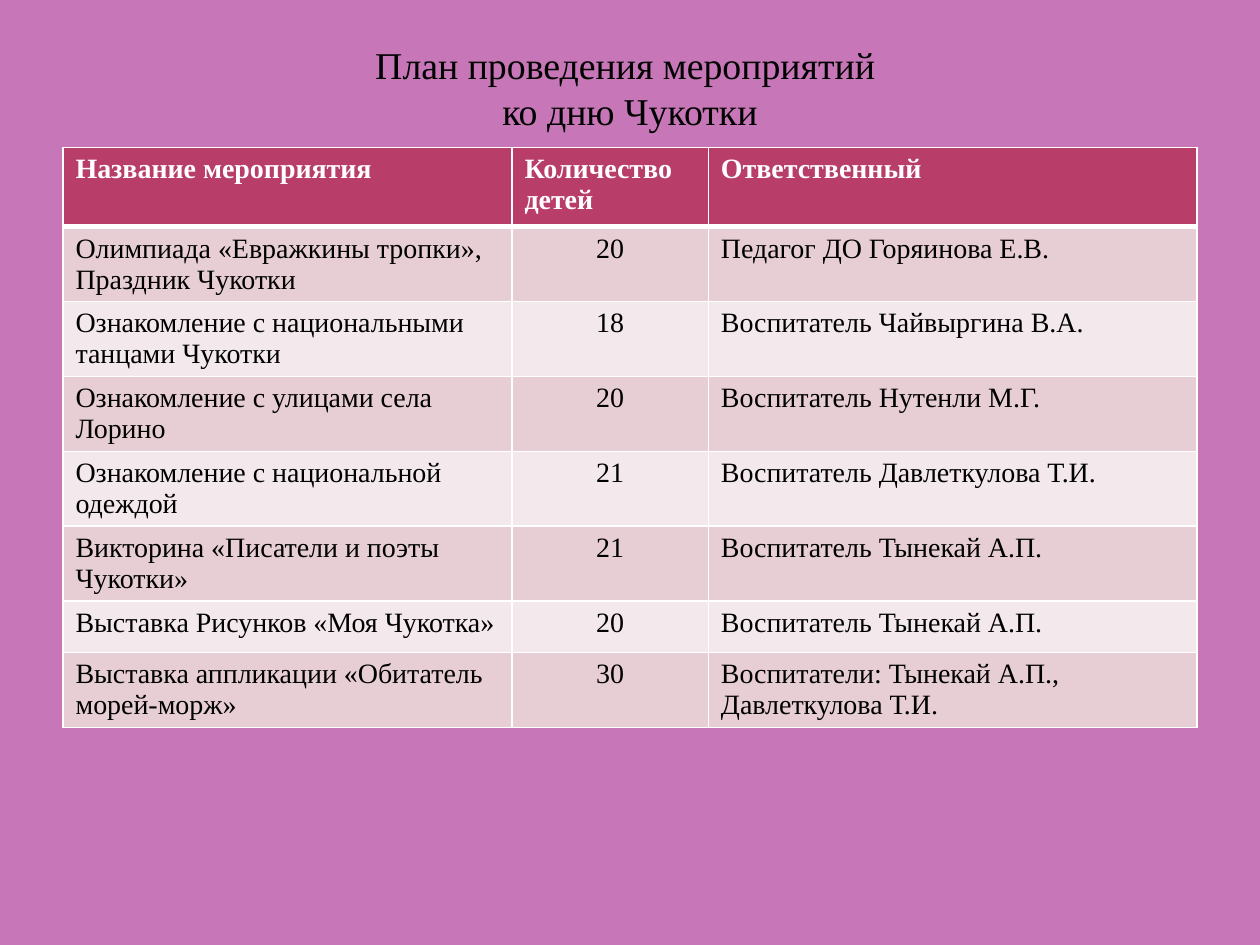
from lxml import etree
from pptx import Presentation, util as u
from pptx.dml.color import RGBColor
from pptx.enum import text
from pptx.oxml.ns import qn

TITLE = "План проведения мероприятий \vко дню Чукотки"
HEADER = ("Название мероприятия", "Количество детей", "Ответственный")
EVENTS = [
    ("Олимпиада «Евражкины тропки», Праздник Чукотки", "20", "Педагог ДО Горяинова Е.В."),
    ("Ознакомление с национальными танцами Чукотки", "18", "Воспитатель Чайвыргина В.А."),
    ("Ознакомление с улицами села Лорино", "20", "Воспитатель Нутенли М.Г."),
    ("Ознакомление с национальной одеждой", "21", "Воспитатель Давлеткулова Т.И."),
    ("Викторина «Писатели и поэты Чукотки»", "21", "Воспитатель Тынекай А.П."),
    ("Выставка Рисунков «Моя Чукотка»", "20", "Воспитатель Тынекай А.П."),
    ("Выставка аппликации «Обитатель морей-морж»", "30",
     "Воспитатели: Тынекай А.П., Давлеткулова Т.И."),
]
COLUMN_WIDTHS = (9.05, 3.96, 9.85)
ROW_HEIGHTS = (1.6, 1.5, 1.5, 1.5, 1.5, 1.5, 1.04, 1.5)
FONT = "Times New Roman"
COLORS = {"background": "C777B7", "header": "B83D68", "odd": "E6CED4",
          "even": "F3E8EB", "border": "FFFFFF", "header_text": "FFFFFF",
          "text": "000000"}


def rgb(name):
    return RGBColor.from_string(COLORS[name])


def style_runs(p, size, color, bold=False):
    for r in p.runs:
        r.font.name = FONT
        r.font.size = u.Pt(size)
        r.font.bold = bold
        r.font.color.rgb = rgb(color)


def set_borders(cell, **widths):
    """Draw cell borders; widths maps L, R, T and B to points."""
    props = cell._tc.get_or_add_tcPr()
    for i, (side, width) in enumerate(widths.items()):
        line = etree.Element(qn(f"a:ln{side}"), w=str(u.Pt(width)))
        fill = etree.SubElement(line, qn("a:solidFill"))
        etree.SubElement(fill, qn("a:srgbClr"), val=COLORS["border"])
        props.insert(i, line)


def add_title(s):
    sp = s.shapes.title
    sp.left, sp.top, sp.width, sp.height = (u.Cm(v) for v in (1.27, 0.76, 22.86, 2))
    tf = sp.text_frame
    tf.word_wrap = True
    tf.auto_size = text.MSO_AUTO_SIZE.NONE
    tf.vertical_anchor = text.MSO_ANCHOR.MIDDLE
    p = tf.paragraphs[0]
    p.text = TITLE
    p.alignment = text.PP_ALIGN.CENTER
    style_runs(p, 21.6, "text")


def add_plan(s):
    rows = [HEADER, *EVENTS]
    table = s.shapes.add_table(
        len(rows), len(HEADER), u.Cm(1.27), u.Cm(2.97),
        u.Cm(sum(COLUMN_WIDTHS)), u.Cm(sum(ROW_HEIGHTS))).table
    for column, width in zip(table.columns, COLUMN_WIDTHS):
        column.width = u.Cm(width)
    for i, (row, values, height) in enumerate(zip(table.rows, rows, ROW_HEIGHTS)):
        row.height = u.Cm(height)
        is_header = i == 0
        fill = "header" if is_header else ("even", "odd")[i % 2]
        for j, (cell, value) in enumerate(zip(row.cells, values)):
            cell.fill.solid()
            cell.fill.fore_color.rgb = rgb(fill)
            set_borders(cell, L=1, R=1, T=3 if i == 1 else 1, B=3 if is_header else 1)
            p = cell.text_frame.paragraphs[0]
            p.text = value
            if j == 1 and not is_header:
                p.alignment = text.PP_ALIGN.CENTER
            style_runs(p, 16, "header_text" if is_header else "text", is_header)


def main():
    prs = Presentation()
    prs.slide_width, prs.slide_height = u.Cm(25.4), u.Cm(19.05)
    s = prs.slides.add_slide(prs.slide_layouts[5])
    s.background.fill.solid()
    s.background.fill.fore_color.rgb = rgb("background")
    add_title(s)
    add_plan(s)
    prs.save("out.pptx")


if __name__ == "__main__":
    main()
